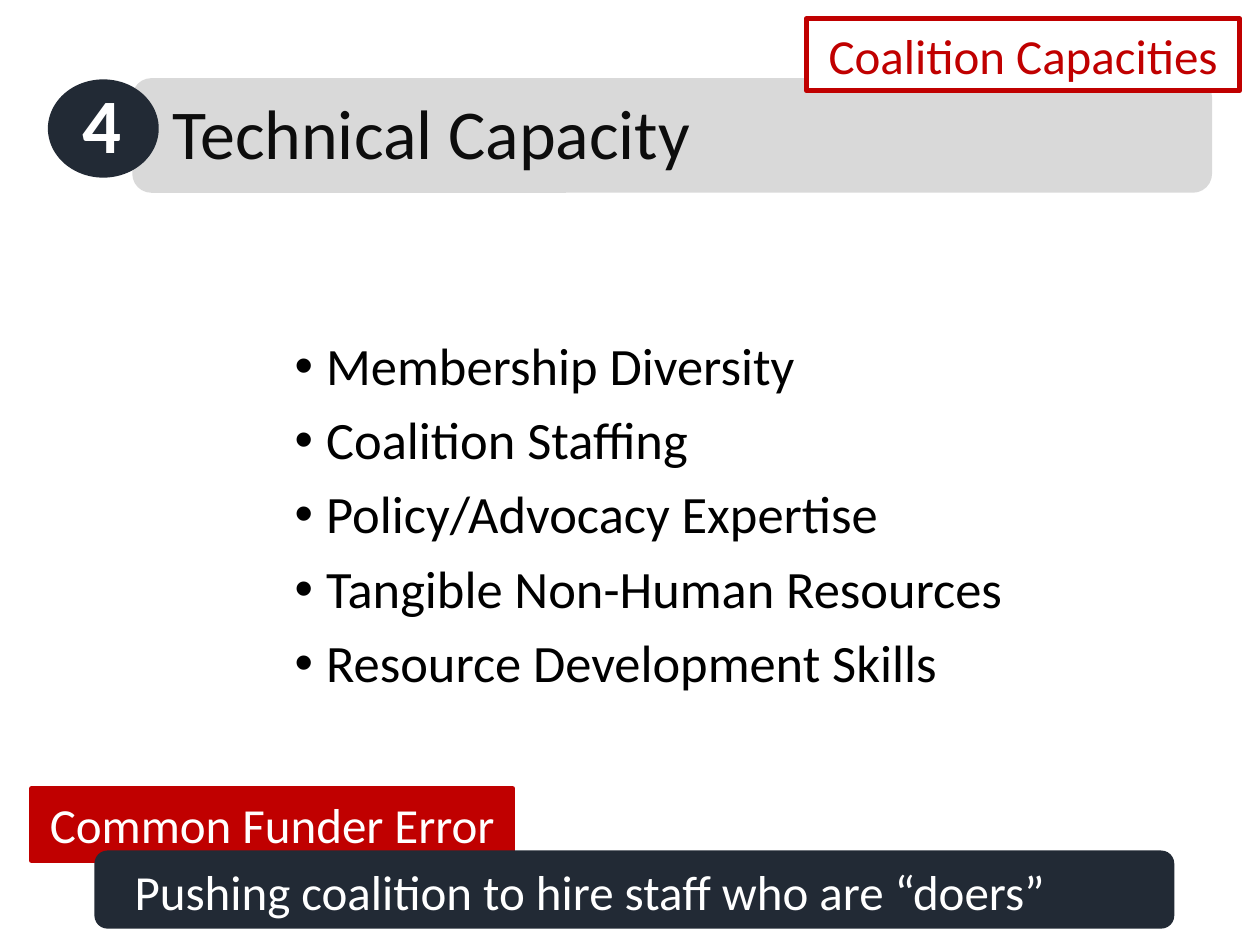
from lxml.etree import SubElement
from pptx import Presentation
from pptx.dml.color import RGBColor
from pptx.enum.shapes import MSO_SHAPE
from pptx.enum.text import MSO_ANCHOR, PP_ALIGN
from pptx.oxml.ns import qn
from pptx.util import Inches, Pt

FONT = "Calibri"
WHITE = RGBColor(0xFF, 0xFF, 0xFF)
BLACK = RGBColor(0, 0, 0)
TITLE_INK = RGBColor(0x0D, 0x0D, 0x0D)
GREY = RGBColor(0xD9, 0xD9, 0xD9)
NAVY = RGBColor(0x22, 0x2A, 0x35)
RED = RGBColor(0xC0, 0, 0)

CAPACITIES = [
    "Membership Diversity",
    "Coalition Staffing",
    "Policy/Advocacy Expertise",
    "Tangible Non-Human Resources",
    "Resource Development Skills",
]


def style_paragraph(paragraph, text, size, color, align=PP_ALIGN.LEFT, bold=False):
    paragraph.text = text
    paragraph.alignment = align
    font = paragraph.font
    font.name, font.size, font.bold = FONT, Pt(size), bold
    font.color.rgb = color


def add_panel(slide, preset, box, fill, outline=None):
    panel = slide.shapes.add_shape(preset, *map(Inches, box))
    panel.shadow.inherit = False
    panel.fill.solid()
    panel.fill.fore_color.rgb = fill
    if outline is None:
        panel.line.fill.background()
    else:
        panel.line.color.rgb = outline
        panel.line.width = Pt(3)
    return panel


def add_label(slide, box, text, size, color, align=PP_ALIGN.LEFT, bold=False):
    label = slide.shapes.add_textbox(*map(Inches, box))
    label.text_frame.word_wrap = True
    style_paragraph(label.text_frame.paragraphs[0], text, size, color, align, bold)


def add_tag(slide, box, text, fill, color):
    """Red-outlined rectangle with centred text."""
    tag = add_panel(slide, MSO_SHAPE.RECTANGLE, box, fill, RED)
    frame = tag.text_frame
    frame.word_wrap = True
    frame.vertical_anchor = MSO_ANCHOR.TOP
    style_paragraph(frame.paragraphs[0], text, 28, color, PP_ALIGN.CENTER)


def add_bullet_list(slide, box, items):
    frame = slide.shapes.add_textbox(*map(Inches, box)).text_frame
    frame.word_wrap = True
    for index, item in enumerate(items):
        paragraph = frame.add_paragraph() if index else frame.paragraphs[0]
        style_paragraph(paragraph, item, 30, BLACK)
        paragraph.line_spacing = 0.9
        paragraph.space_before = Pt(10)
        properties = paragraph._p.get_or_add_pPr()
        properties.set("marL", str(Inches(0.25)))
        properties.set("indent", str(-Inches(0.25)))
        bullet_font = SubElement(properties, qn("a:buFont"))
        bullet_font.set("typeface", "Arial")
        bullet = SubElement(properties, qn("a:buChar"))
        bullet.set("char", "•")
        # The schema wants the default run properties after the bullet.
        properties.append(properties.find(qn("a:defRPr")))


def add_heading(slide):
    add_panel(slide, MSO_SHAPE.ROUNDED_RECTANGLE, (1.05, 0.62, 8.57, 0.91), GREY)
    add_panel(slide, MSO_SHAPE.OVAL, (0.38, 0.63, 0.88, 0.78), NAVY)
    add_label(slide, (0.53, 0.56, 0.56, 0.84), "4", 44, WHITE, PP_ALIGN.CENTER, True)
    add_label(slide, (1.27, 0.66, 8.36, 0.77), "Technical Capacity", 40, TITLE_INK)


def add_funder_error(slide):
    add_tag(slide, (0.25, 6.26, 3.82, 0.57), "Common Funder Error", RED, WHITE)
    add_panel(slide, MSO_SHAPE.ROUNDED_RECTANGLE, (0.75, 6.75, 8.57, 0.62), NAVY)
    add_label(slide, (0.97, 6.79, 8.36, 0.57),
              "Pushing coalition to hire staff who are “doers”", 28, WHITE)


def main():
    presentation = Presentation()
    presentation.slide_width = Inches(10)
    presentation.slide_height = Inches(7.5)
    slide = presentation.slides.add_slide(presentation.slide_layouts[6])
    add_heading(slide)
    add_tag(slide, (6.4, 0.15, 3.44, 0.57), "Coalition Capacities", WHITE, RED)
    add_bullet_list(slide, (2.24, 2.65, 6.18, 5.23), CAPACITIES)
    add_funder_error(slide)
    presentation.save("out.pptx")


if __name__ == "__main__":
    main()
